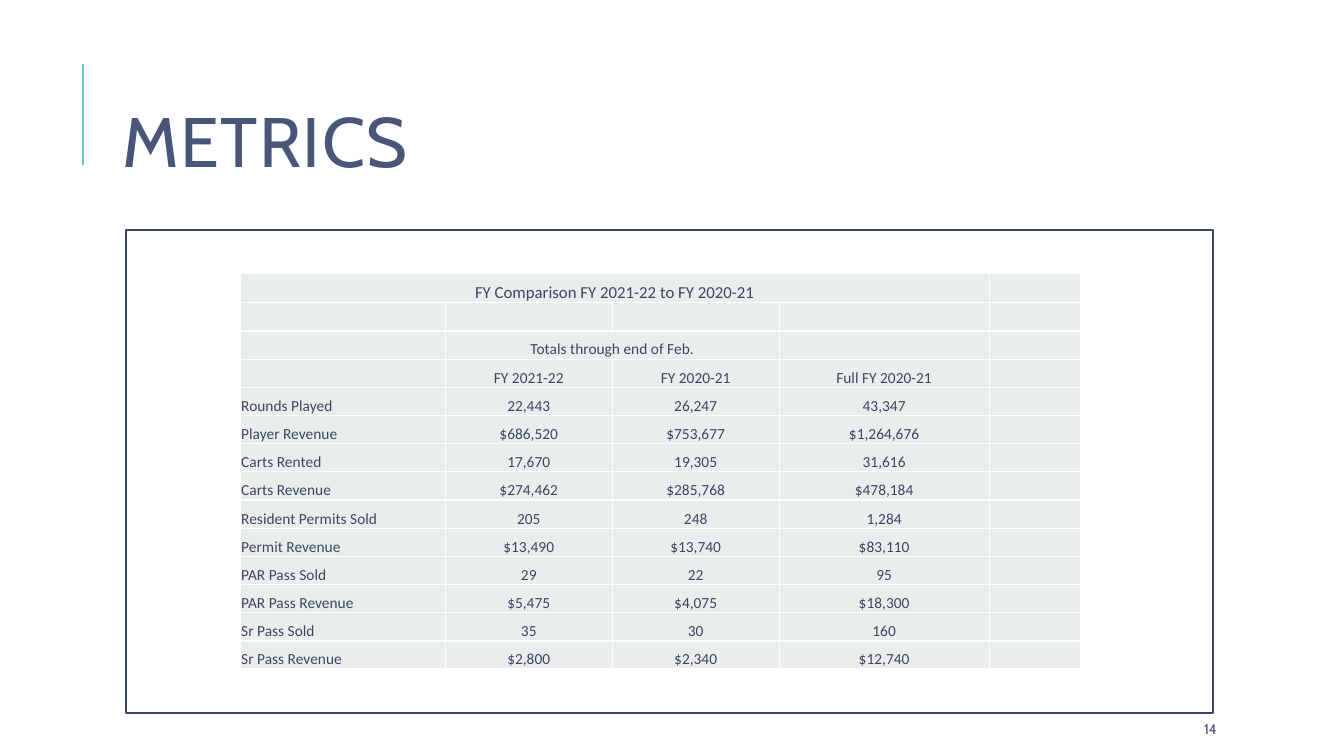
"""Build the golf metrics slide: a title, a frame and a year-on-year table."""
import dataclasses

import lxml.etree
import pptx
import pptx.dml.color
import pptx.enum.shapes
import pptx.enum.text
import pptx.oxml.ns
import pptx.util

Pt = pptx.util.Pt
qn = pptx.oxml.ns.qn
ALIGN = pptx.enum.text.PP_ALIGN
ANCHOR = pptx.enum.text.MSO_ANCHOR


@dataclasses.dataclass(frozen=True)
class Theme:
    white: str = "FFFFFF"
    accent: str = "62C7CD"
    heading: str = "495579"
    ink: str = "3C4663"
    cell: str = "E9EEED"
    heading_font: str = "Cabin"
    table_font: str = "Calibri"
    title_size: float = 50
    caption_size: float = 12
    cell_size: float = 11
    number_size: float = 10


THEME = Theme()
COLUMN_WIDTHS = [146.5, 119.25, 119.25, 150, 65.5]
CAPTION_HEIGHT = 21
ROW_HEIGHT = 20.15
ROWS = [
    ["FY Comparison FY 2021-22 to FY 2020-21"],
    [],
    ["", "Totals through end of Feb."],
    ["", "FY 2021-22", "FY 2020-21", "Full FY 2020-21"],
    ["Rounds Played", "22,443", "26,247", "43,347"],
    ["Player Revenue", "$686,520", "$753,677", "$1,264,676"],
    ["Carts Rented", "17,670", "19,305", "31,616"],
    ["Carts Revenue", "$274,462", "$285,768", "$478,184"],
    ["Resident Permits Sold", "205", "248", "1,284"],
    ["Permit Revenue", "$13,490", "$13,740", "$83,110"],
    ["PAR Pass Sold", "29", "22", "95"],
    ["PAR Pass Revenue", "$5,475", "$4,075", "$18,300"],
    ["Sr Pass Sold", "35", "30", "160"],
    ["Sr Pass Revenue", "$2,800", "$2,340", "$12,740"],
]


def rgb(value):
    return pptx.dml.color.RGBColor.from_string(value)


def style_font(font, name, size, color):
    font.name = name
    font.size = Pt(size)
    font.color.rgb = rgb(color)


def add_text(s, text, box, size):
    sp = s.shapes.add_textbox(*map(Pt, box))
    tf = sp.text_frame
    tf.word_wrap = True
    tf.vertical_anchor = ANCHOR.MIDDLE
    p = tf.paragraphs[0]
    p.text = text
    style_font(p.font, THEME.heading_font, size, THEME.heading)
    return p


def add_title(s, text, box):
    p = add_text(s, text, box, THEME.title_size)
    p.line_spacing = 0.8
    p.runs[0].font._element.set("spc", "100")


def add_rule(s, x, top, bottom):
    line = s.shapes.add_connector(
        pptx.enum.shapes.MSO_CONNECTOR.STRAIGHT, Pt(x), Pt(bottom), Pt(x), Pt(top))
    line.line.color.rgb = rgb(THEME.accent)
    line.line.width = Pt(1.5)
    lxml.etree.SubElement(line._element.spPr, qn("a:effectLst"))


def add_frame(s, box):
    sp = s.shapes.add_shape(pptx.enum.shapes.MSO_SHAPE.RECTANGLE, *map(Pt, box))
    sp.shadow.inherit = False
    sp.fill.solid()
    sp.fill.fore_color.rgb = rgb(THEME.white)
    sp.line.color.rgb = rgb(THEME.ink)
    sp.line.width = Pt(1.25)


def add_borders(cell):
    tc_pr = cell._tc.get_or_add_tcPr()
    for i, side in enumerate(("a:lnL", "a:lnR", "a:lnT", "a:lnB")):
        ln = lxml.etree.Element(qn(side), w=str(Pt(1)))
        fill = lxml.etree.SubElement(ln, qn("a:solidFill"))
        lxml.etree.SubElement(fill, qn("a:srgbClr"), val=THEME.white)
        tc_pr.insert(i, ln)


def fill_cell(cell, text, size, align):
    cell.fill.solid()
    cell.fill.fore_color.rgb = rgb(THEME.cell)
    add_borders(cell)
    cell.margin_left = cell.margin_right = cell.margin_top = Pt(0.7)
    cell.margin_bottom = Pt(0)
    cell.vertical_anchor = ANCHOR.BOTTOM
    p = cell.text_frame.paragraphs[0]
    p.alignment = align
    style_font(p.font, THEME.table_font, size, THEME.ink)
    if text:
        p.text = text
    else:
        lxml.etree.SubElement(p._p, qn("a:endParaRPr"), sz=str(int(size * 100)))


def add_metrics_table(s, left, top):
    heights = [CAPTION_HEIGHT] + [ROW_HEIGHT] * (len(ROWS) - 1)
    table = s.shapes.add_table(
        len(ROWS), len(COLUMN_WIDTHS), Pt(left), Pt(top),
        Pt(sum(COLUMN_WIDTHS)), Pt(sum(heights))).table
    table.first_row = table.horz_banding = False
    for column, width in zip(table.columns, COLUMN_WIDTHS):
        column.width = Pt(width)
    for r, (values, height) in enumerate(zip(ROWS, heights)):
        table.rows[r].height = Pt(height)
        size = THEME.cell_size if r else THEME.caption_size
        for c in range(len(COLUMN_WIDTHS)):
            text = values[c] if c < len(values) else ""
            align = ALIGN.LEFT if r and c == 0 else ALIGN.CENTER
            fill_cell(table.cell(r, c), text, size, align)
    table.cell(0, 0).merge(table.cell(0, 3))
    table.cell(2, 1).merge(table.cell(2, 2))


def main():
    prs = pptx.Presentation()
    prs.slide_width, prs.slide_height = Pt(960), Pt(540)
    s = prs.slides.add_slide(prs.slide_layouts[6])
    add_rule(s, 59.25, 46, 118)
    add_title(s, "METRICS", (80.6, 46, 765.4, 118))
    add_text(s, "14", (853, 509.8, 76.3, 21.6), THEME.number_size)
    add_frame(s, (90, 164.2, 776.2, 345.3))
    add_metrics_table(s, 171.6, 195.3)
    prs.save("out.pptx")


if __name__ == "__main__":
    main()
